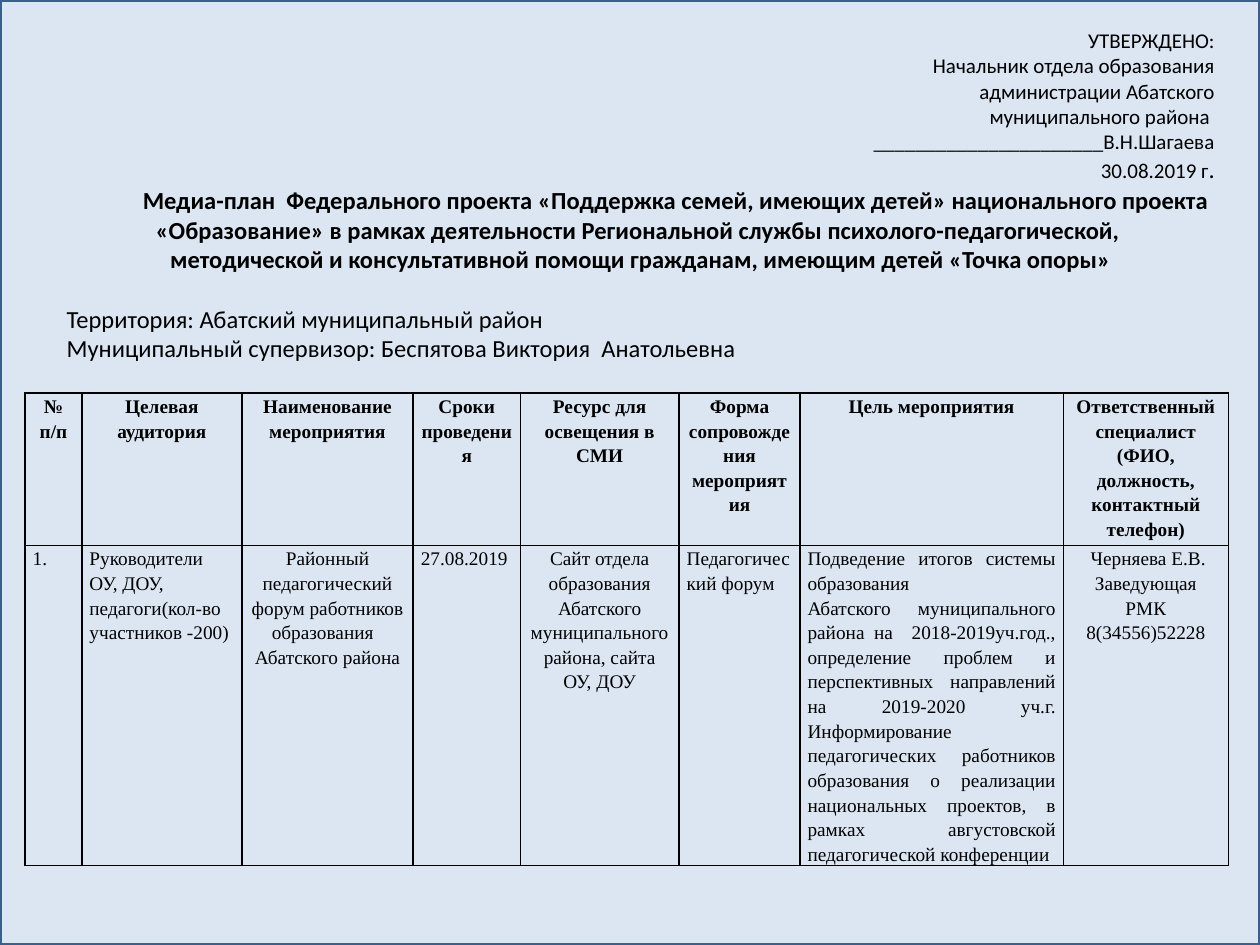
from dataclasses import dataclass

from lxml.etree import SubElement
from pptx import Presentation
from pptx.dml.color import RGBColor
from pptx.enum.shapes import MSO_SHAPE as Shape
from pptx.enum.text import MSO_ANCHOR as Anchor, MSO_AUTO_SIZE as AutoSize, PP_ALIGN as Align
from pptx.oxml.ns import qn
from pptx.util import Inches, Pt


@dataclass(frozen=True)
class Theme:
    ink: str = "000000"
    paper: str = "DCE6F2"
    frame: str = "3A5F8C"
    text_font: str = "Calibri"
    table_font: str = "Times New Roman"
    small: int = 12
    large: int = 14
    cell: int = 11
    spacing: float = 1.15


THEME = Theme()
LEFT, CENTER, RIGHT, JUSTIFY = Align.LEFT, Align.CENTER, Align.RIGHT, Align.JUSTIFY

APPROVAL = [
    "УТВЕРЖДЕНО:",
    "Начальник отдела образования",
    "администрации Абатского",
    "муниципального района ",
    "______________________В.Н.Шагаева",
]
APPROVAL_DATE = [("30.08.2019 г", THEME.small), (".", THEME.large)]
TITLE = [
    (RIGHT, "Медиа-план  Федерального проекта «Поддержка семей, имеющих детей» национального проекта "),
    (CENTER, "«Образование» в рамках деятельности Региональной службы психолого-педагогической, "),
    (CENTER, "методической и консультативной помощи гражданам, имеющим детей «Точка опоры»"),
]
DETAILS = [
    "Территория: Абатский муниципальный район",
    "Муниципальный супервизор: Беспятова Виктория  Анатольевна",
]
COLUMNS = [
    (0.45, ["№", "п/п"], LEFT, ["1."]),
    (1.27, ["Целевая аудитория"], LEFT, ["Руководители ОУ, ДОУ, педагоги(кол-во участников -200)"]),
    (1.36, ["Наименование мероприятия"], CENTER,
     ["Районный педагогический форум работников образования  ", "Абатского района"]),
    (0.85, ["Сроки проведения"], LEFT, ["27.08.2019"]),
    (1.26, ["Ресурс для освещения в СМИ"], CENTER,
     ["Сайт отдела образования", "Абатского муниципального", "района, сайта", "ОУ, ДОУ"]),
    (0.96, ["Форма сопровождения мероприятия"], LEFT, ["Педагогический форум"]),
    (2.09, ["Цель мероприятия"], JUSTIFY,
     ["Подведение итогов системы образования",
      "Абатского муниципального района на  2018-2019уч.год., определение проблем и "
      "перспективных направлений на 2019-2020 уч.г. Информирование педагогических "
      "работников образования о реализации национальных проектов, в рамках августовской "
      "педагогической конференции"]),
    (1.31, ["Ответственный специалист (ФИО, должность, контактный телефон)"], CENTER,
     [" Черняева Е.В.", "Заведующая", "РМК", "8(34556)52228"]),
]
ROW_HEIGHTS = [1.21, 2.5]
TABLE_LEFT, TABLE_TOP = 0.2, 3.12
TEXT_LEFT, TEXT_WIDTH = 0.43, 9.31
APPROVAL_TOP, APPROVAL_HEIGHT = 0.22, 1.25
TITLE_TOP, TITLE_HEIGHT = APPROVAL_TOP + APPROVAL_HEIGHT, 0.71
DETAILS_TOP, DETAILS_HEIGHT = 2.41, 0.48


def write(frame, paragraphs, font, bold=False, spacing=1.0):
    for index, (align, runs) in enumerate(paragraphs):
        para = frame.paragraphs[0] if index == 0 else frame.add_paragraph()
        para.alignment = align
        para.line_spacing = spacing
        for text, size in runs:
            span = para.add_run()
            span.text = text
            span.font.name = font
            span.font.size = Pt(size)
            span.font.bold = bold
            span.font.color.rgb = RGBColor.from_string(THEME.ink)


def fill_box(box, top, height, paragraphs, bold=False):
    box.left, box.top = Inches(TEXT_LEFT), Inches(top)
    box.width, box.height = Inches(TEXT_WIDTH), Inches(height)
    frame = box.text_frame
    frame.word_wrap = True
    frame.auto_size = AutoSize.NONE
    frame.vertical_anchor = Anchor.TOP
    frame.margin_top = frame.margin_bottom = 0
    write(frame, paragraphs, THEME.text_font, bold)


def add_borders(cell):
    properties = cell._tc.get_or_add_tcPr()
    for position, side in enumerate(("lnL", "lnR", "lnT", "lnB")):
        line = SubElement(properties, qn(f"a:{side}"), w=str(Pt(1)))
        SubElement(SubElement(line, qn("a:solidFill")), qn("a:srgbClr"), val=THEME.ink)
        properties.insert(position, line)


def fill_cell(cell, lines, align, bold):
    cell.margin_left = cell.margin_right = Inches(0.06)
    cell.margin_top = cell.margin_bottom = 0
    cell.vertical_anchor = Anchor.TOP
    cell.fill.background()
    add_borders(cell)
    paragraphs = [(align, [(line, THEME.cell)]) for line in lines]
    write(cell.text_frame, paragraphs, THEME.table_font, bold, THEME.spacing)


def add_backdrop(deck, page):
    backdrop = page.shapes.add_shape(Shape.RECTANGLE, 0, 0, deck.slide_width, deck.slide_height)
    backdrop.shadow.inherit = False
    backdrop.fill.solid()
    backdrop.fill.fore_color.rgb = RGBColor.from_string(THEME.paper)
    backdrop.line.color.rgb = RGBColor.from_string(THEME.frame)
    backdrop.line.width = Pt(2)
    page.shapes._spTree.insert(2, backdrop._element)


def add_plan(page):
    table = page.shapes.add_table(
        len(ROW_HEIGHTS), len(COLUMNS), Inches(TABLE_LEFT), Inches(TABLE_TOP),
        Inches(sum(column[0] for column in COLUMNS)), Inches(sum(ROW_HEIGHTS))).table
    table.first_row = table.horz_banding = False
    for row, height in zip(table.rows, ROW_HEIGHTS):
        row.height = Inches(height)
    for index, (width, heading, align, body) in enumerate(COLUMNS):
        table.columns[index].width = Inches(width)
        fill_cell(table.cell(0, index), heading, CENTER, True)
        fill_cell(table.cell(1, index), body, align, False)


def main():
    deck = Presentation()
    deck.slide_width, deck.slide_height = Inches(10), Inches(7.5)
    page = deck.slides.add_slide(deck.slide_layouts[5])
    add_backdrop(deck, page)
    add_plan(page)

    approval = [(RIGHT, [(line, THEME.small)]) for line in APPROVAL] + [(RIGHT, APPROVAL_DATE)]
    title = [(align, [(line, THEME.large)]) for align, line in TITLE]
    details = [(LEFT, [(line, THEME.large)]) for line in DETAILS]
    fill_box(page.shapes.add_textbox(0, 0, 0, 0), APPROVAL_TOP, APPROVAL_HEIGHT, approval)
    fill_box(page.shapes.title, TITLE_TOP, TITLE_HEIGHT, title, bold=True)
    fill_box(page.shapes.add_textbox(0, 0, 0, 0), DETAILS_TOP, DETAILS_HEIGHT, details)
    deck.save("out.pptx")


if __name__ == "__main__":
    main()
